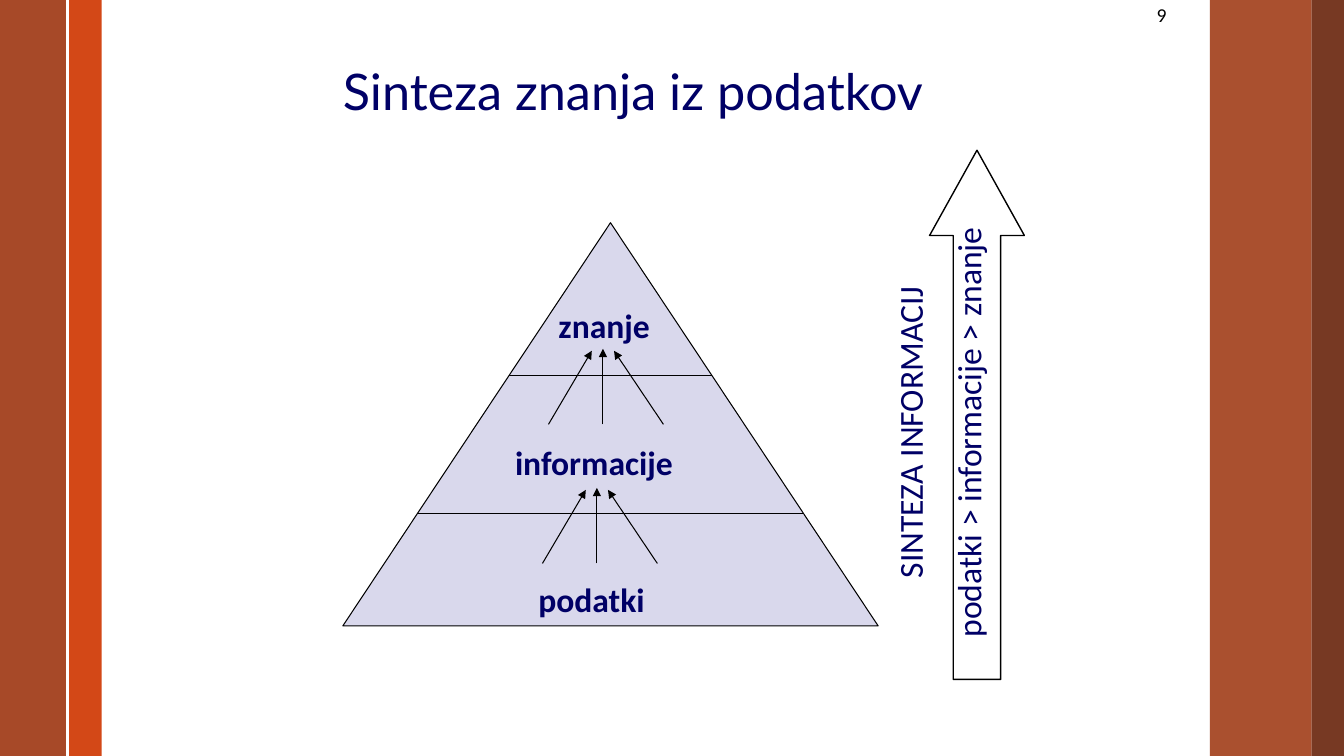
from dataclasses import dataclass

from lxml import etree
from pptx import Presentation
from pptx import util as u
from pptx.dml.color import RGBColor
from pptx.enum import shapes, text
from pptx.oxml.ns import qn


@dataclass(frozen=True)
class Theme:
    """Colours, fonts and type sizes of the deck."""
    ink: str = "000066"
    black: str = "000000"
    white: str = "FFFFFF"
    lilac: str = "D9D8EC"
    orange: str = "D34817"
    rust: str = "9E3611"
    brown: str = "69240C"
    body_font: str = "Calibri"
    title_font: str = "Lato"
    title_size: int = 36
    body_size: int = 24
    number_size: int = 14
    hairline: float = 0.75


@dataclass(frozen=True)
class Box:
    """A rectangle in inches."""
    left: float
    top: float
    width: float
    height: float

    def emu(self):
        """Return the rectangle as slide lengths."""
        return [u.Inches(n) for n in (self.left, self.top, self.width, self.height)]

    def point(self, across, down):
        """Return the point at the given shares of the box."""
        return self.left + across * self.width, self.top + down * self.height


THEME = Theme()
PAGE = Box(0, 0, 13.33, 7.5)


def add_line(page, start, end, color=THEME.black, width=THEME.hairline, arrow=False):
    """Draw a straight line, with an arrowhead at its end on request."""
    ends = [u.Inches(n) for n in (*start, *end)]
    line = page.shapes.add_connector(shapes.MSO_CONNECTOR.STRAIGHT, *ends)
    line.line.color.rgb = RGBColor.from_string(color)
    line.line.width = u.Pt(width)
    if arrow:
        etree.SubElement(line.line._get_or_add_ln(), qn("a:tailEnd"), type="triangle")
    etree.SubElement(line._element.spPr, qn("a:effectLst"))


def add_shape(page, kind, box, fill=None, alpha=100, outline=None, width=THEME.hairline):
    """Draw a preset shape with the given fill, opacity and outline."""
    shape = page.shapes.add_shape(kind, *box.emu())
    shape.shadow.inherit = False
    if fill:
        shape.fill.solid()
        shape.fill.fore_color.rgb = RGBColor.from_string(fill)
        if alpha < 100:
            color = shape.fill._xPr.find(qn("a:solidFill"))[0]
            etree.SubElement(color, qn("a:alpha"), val=str(alpha * 1000))
    else:
        shape.fill.background()
    if outline:
        shape.line.color.rgb = RGBColor.from_string(outline)
        shape.line.width = u.Pt(width)
    else:
        shape.line.fill.background()
    return shape


def write(frame, words, size=THEME.body_size, font=THEME.body_font, color=THEME.ink,
          bold=False, align=text.PP_ALIGN.LEFT, spacing=0.93, before=0):
    """Fill a text frame with one paragraph per line of words."""
    frame.word_wrap = True
    frame.auto_size = text.MSO_AUTO_SIZE.NONE
    for index, line in enumerate(words.split("\n")):
        para = frame.add_paragraph() if index else frame.paragraphs[0]
        para.alignment = align
        para.line_spacing = spacing
        para.space_before = u.Pt(before)
        span = para.add_run()
        span.text = line
        span.font.size = u.Pt(size)
        span.font.name = font
        span.font.bold = bold
        span.font.color.rgb = RGBColor.from_string(color)


def add_text(page, box, words, **style):
    """Add a text box holding the given words."""
    label = page.shapes.add_textbox(*box.emu())
    write(label.text_frame, words, **style)
    return label


def draw_side_bands(page, box):
    """Draw the coloured bands along both edges of the page."""
    bands = [(0.68, 0.33, THEME.orange, 100), (0, 0.67, THEME.rust, 90),
             (12, 1.01, THEME.rust, 87), (13.01, 0.32, THEME.brown, 90)]
    for left, width, color, alpha in bands:
        band = Box(box.left + left, box.top, width, box.height)
        add_shape(page, shapes.MSO_SHAPE.RECTANGLE, band, color, alpha)
    rule = 0.67 / box.width
    add_line(page, box.point(rule, 0), box.point(rule, 1), THEME.white, 1.5)


def draw_heading(page, box):
    """Place the title and, above its right end, the page number."""
    title = page.shapes.title
    title.left, title.top, title.width, title.height = box.emu()
    title.text_frame.vertical_anchor = text.MSO_ANCHOR.BOTTOM
    write(title.text_frame, "Sinteza znanja iz podatkov", size=THEME.title_size,
          font=THEME.title_font, spacing=0.9)
    width = 2.33
    number = Box(box.left + box.width - width, 0, width, 0.5)
    add_text(page, number, "9", size=THEME.number_size, color=THEME.black,
             align=text.PP_ALIGN.RIGHT)


def draw_fan(page, x, y):
    """Draw three arrows that rise from a level and converge on the next."""
    for start, end, rise in ((-0.54, -0.11, 0.73), (0, 0, 0.75), (0.6, 0.11, 0.73)):
        add_line(page, (x + start, y), (x + end, y - rise), arrow=True)


def draw_pyramid(page, box):
    """Draw the pyramid with its levels, labels and rising arrows."""
    add_shape(page, shapes.MSO_SHAPE.ISOSCELES_TRIANGLE, box, THEME.lilac,
              outline=THEME.black)
    for depth in (0.38, 0.72):
        add_line(page, box.point(0.5 - depth / 2, depth), box.point(0.5 + depth / 2, depth))
    levels = [("znanje", 2.04, 1.35), ("informacije", 1.61, 2.16), ("podatki", 1.84, 1.48)]
    for row, (words, left, width) in enumerate(levels):
        label = Box(box.left + left, box.top + 0.8 + 1.36 * row, width, 0.48)
        add_text(page, label, words, bold=True, before=15)
    for across, down in ((2.58, 2), (2.52, 3.38)):
        draw_fan(page, box.left + across, box.top + down)


def draw_synthesis_arrow(page, box):
    """Draw the tall arrow and the upright text running along it."""
    length, depth = 6.39, 1.07
    label = Box(box.left + 0.12 - length / 2, box.top + 2.8 - depth / 2, length, depth)
    upright = add_text(page, label, "SINTEZA INFORMACIJ\npodatki > informacije > znanje",
                       align=text.PP_ALIGN.CENTER, before=15)
    upright.rotation = 270
    arrow = add_shape(page, shapes.MSO_SHAPE.UP_ARROW, box, outline=THEME.black, width=1)
    arrow.adjustments[0], arrow.adjustments[1] = 0.5, 0.9


def main():
    """Build the deck and save it."""
    deck = Presentation()
    deck.slide_width, deck.slide_height = u.Inches(PAGE.width), u.Inches(PAGE.height)
    page = deck.slides.add_slide(deck.slide_layouts[5])
    draw_side_bands(page, PAGE)
    draw_heading(page, Box(3.3, 0.3, 8.37, 0.95))
    draw_synthesis_arrow(page, Box(9.22, 1.49, 0.94, 5.25))
    draw_pyramid(page, Box(3.4, 2.21, 5.31, 4))
    deck.save("out.pptx")


if __name__ == "__main__":
    main()
